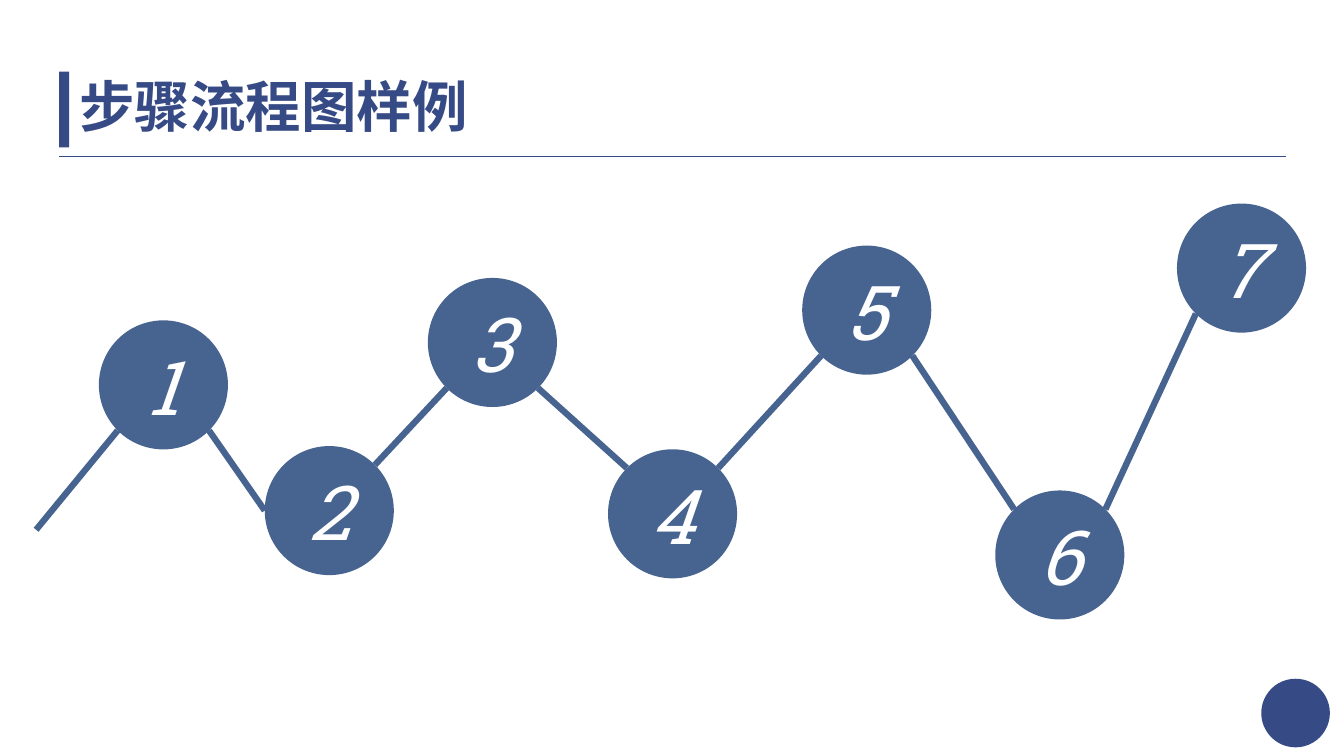
from math import cos, radians, sin

from pptx import Presentation
from pptx.dml.color import RGBColor
from pptx.enum.shapes import MSO_CONNECTOR as Connector, MSO_SHAPE as Shape
from pptx.enum.text import MSO_ANCHOR as Anchor, PP_ALIGN as Align
from pptx.oxml.ns import qn
from pptx.util import Pt
from lxml.etree import SubElement

NAVY, STEEL, WHITE = "364A85", "476490", "FFFFFF"
TITLE_FORMAT = {"name": "Noto Sans CJK SC", "size": Pt(39.6), "bold": True}
NUMBER_FORMAT = {"name": "Roboto Slab", "size": Pt(54), "italic": True}

DIAMETER = 92.2
# Top left corner of each step circle, relative to the chain's box
STEP_CORNERS = [(44.8, 83.4), (163.3, 173.2), (279.8, 53.1), (408.5, 175.5),
                (547.2, 30), (685.1, 204.9), (814.9, 0)]
CHAIN_START = (0, 233)
# Angles, clockwise from the right, at which a link leaves or enters a circle
LOWER_RIGHT, LOWER_LEFT, LEFT, UPPER_LEFT, UPPER_RIGHT = 45, 135, 180, 225, 315
ENTRIES = [LOWER_LEFT, LEFT, LOWER_LEFT, UPPER_LEFT, LOWER_LEFT, UPPER_LEFT, LOWER_LEFT]
EXITS = [LOWER_RIGHT, UPPER_RIGHT, LOWER_RIGHT, UPPER_RIGHT, LOWER_RIGHT, UPPER_RIGHT]


def color(value):
    return RGBColor.from_string(value)


def add_filled(slide, kind, left, top, width, height, fill):
    shape = slide.shapes.add_shape(kind, Pt(left), Pt(top), Pt(width), Pt(height))
    shape.shadow.inherit = False
    shape.fill.solid()
    shape.fill.fore_color.rgb = color(fill)
    shape.line.fill.background()
    return shape


def add_line(slide, start, end, stroke, width):
    points = [Pt(value) for value in (*start, *end)]
    line = slide.shapes.add_connector(Connector.STRAIGHT, *points)
    line.line.color.rgb = color(stroke)
    line.line.width = Pt(width)
    SubElement(line._element.spPr, qn("a:effectLst"))


def write(shape, text, values, fill, align):
    frame = shape.text_frame
    frame.vertical_anchor = Anchor.MIDDLE
    paragraph = frame.paragraphs[0]
    paragraph.alignment = align
    run = paragraph.add_run()
    run.text = text
    for name, value in values.items():
        setattr(run.font, name, value)
    run.font.color.rgb = color(fill)
    SubElement(run.font._element, qn("a:ea"), typeface=values["name"])
    return paragraph


def add_header(slide, left, top, width, height, text):
    # Accent bar and rule
    bar_width = 7.2
    add_filled(slide, Shape.RECTANGLE, left, top, bar_width, height, NAVY)
    rule_top = top + height + 6.3
    add_line(slide, (left, rule_top), (left + width, rule_top), NAVY, 0.5)

    # Title
    title = slide.shapes.title
    title.left, title.top = Pt(left + bar_width), Pt(top)
    title.width, title.height = Pt(width - bar_width), Pt(height)
    paragraph = write(title, text, TITLE_FORMAT, NAVY, Align.LEFT)
    paragraph.line_spacing = 0.9


def rim_point(corner, angle):
    radius = DIAMETER / 2
    return (corner[0] + radius * (1 + cos(radians(angle))),
            corner[1] + radius * (1 + sin(radians(angle))))


def add_step_chain(slide, left, top):
    corners = [(left + x, top + y) for x, y in STEP_CORNERS]

    # Numbered circles
    for number, corner in enumerate(corners, 1):
        circle = add_filled(slide, Shape.OVAL, *corner, DIAMETER, DIAMETER, STEEL)
        write(circle, str(number), NUMBER_FORMAT, WHITE, Align.CENTER)

    # Links from the chain's start through every circle
    starts = [(left + CHAIN_START[0], top + CHAIN_START[1])]
    starts += [rim_point(corner, angle) for corner, angle in zip(corners, EXITS)]
    ends = [rim_point(corner, angle) for corner, angle in zip(corners, ENTRIES)]
    for start, end in zip(starts, ends):
        add_line(slide, start, end, STEEL, 4.5)


def main():
    presentation = Presentation()
    presentation.slide_width, presentation.slide_height = Pt(960), Pt(540)
    slide = presentation.slides.add_slide(presentation.slide_layouts[5])

    add_header(slide, 42.3, 51.2, 876, 54.1, "步骤流程图样例")
    # Corner dot
    add_filled(slide, Shape.OVAL, 900.9, 484.8, 49, 49, NAVY)
    add_step_chain(slide, 25.8, 145.4)

    presentation.save("out.pptx")


if __name__ == "__main__":
    main()
